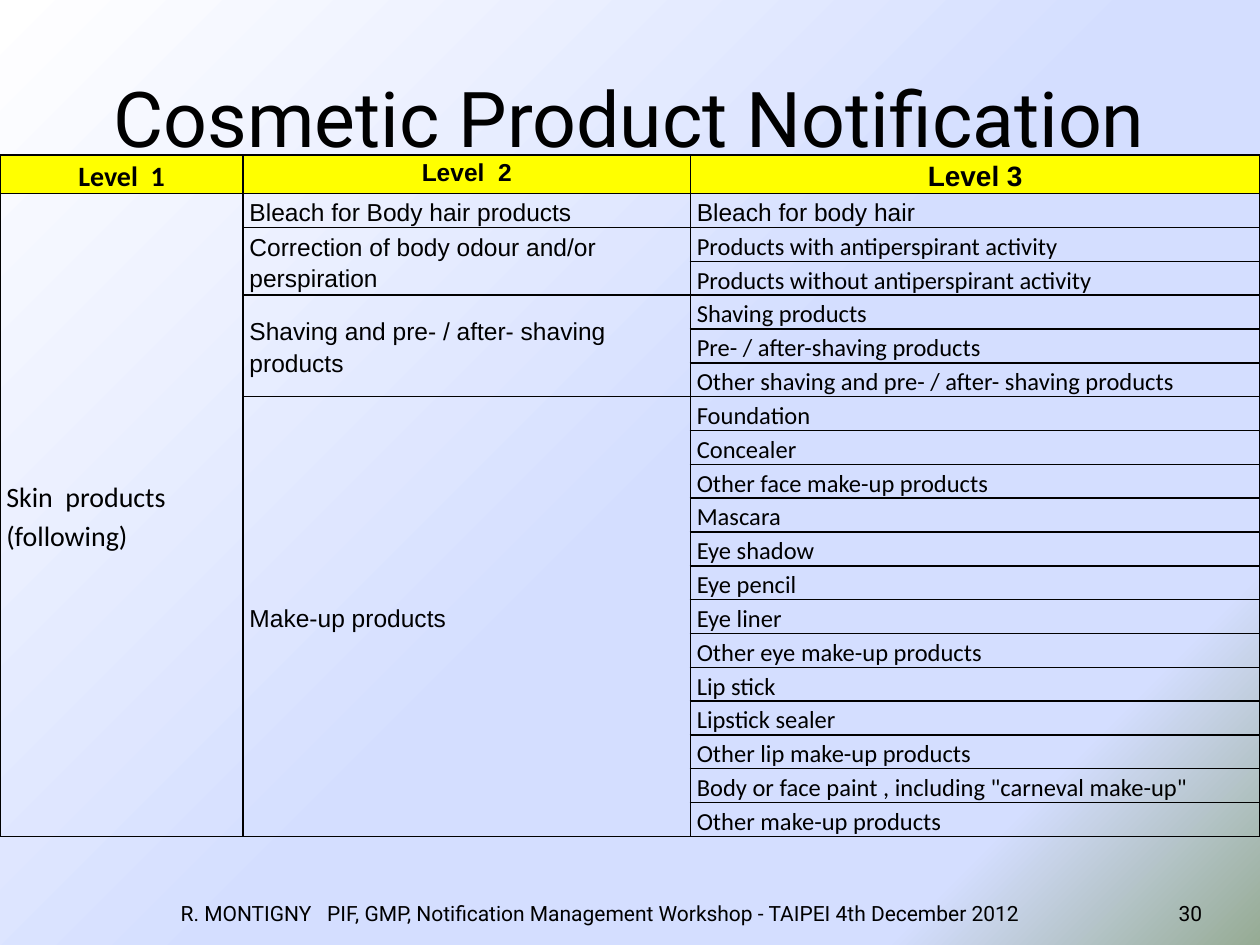
from dataclasses import dataclass

from lxml import etree
from pptx import Presentation
from pptx.dml.color import RGBColor
from pptx.enum import text
from pptx.oxml import ns
from pptx.util import Inches, Pt

COLORS = {"ink": "000000", "header": "FFFF00"}
BACKGROUND_STOPS = [(0, "FFFFFF"), (53, "D4DEFF"), (83, "D4DEFF"), (100, "96AB94")]
COLUMN_WIDTHS = [1.93, 3.55, 4.52]
HEADER_HEIGHT, ROW_HEIGHT = 0.29, 0.26

ALIGN = text.PP_ALIGN
ANCHOR = text.MSO_ANCHOR


@dataclass
class Style:
    size: int
    font: str = "Roboto"
    bold: bool = False
    align: text.PP_ALIGN = ALIGN.LEFT
    anchor: text.MSO_ANCHOR = ANCHOR.MIDDLE
    line_spacing: float = 1.0


@dataclass
class Group:
    name: str
    products: list[str]
    product_style: Style


def body_style(size: int, font: str, anchor=ANCHOR.MIDDLE) -> Style:
    return Style(size, font, anchor=anchor, line_spacing=1.15)


def header_style(size: int, font: str, anchor=ANCHOR.TOP) -> Style:
    return Style(size, font, True, ALIGN.CENTER, anchor, 1.15)


LEVEL_1 = body_style(16, "Calibri")
LEVEL_2 = body_style(14, "Arial")
LEVEL_3 = body_style(14, "Calibri", ANCHOR.TOP)

HEADERS = [
    ("Level  1", header_style(16, "Calibri")),
    ("Level  2", header_style(14, "Arial")),
    ("Level 3", header_style(16, "Arial", ANCHOR.MIDDLE)),
]
GROUPS = [
    Group("Bleach for Body hair products", ["Bleach for body hair"], LEVEL_2),
    Group("Correction of body odour and/or perspiration", [
        "Products with antiperspirant activity",
        "Products without antiperspirant activity",
    ], LEVEL_3),
    Group("Shaving and pre- / after- shaving products", [
        "Shaving products",
        "Pre- / after-shaving products",
        "Other shaving and pre- / after- shaving products",
    ], LEVEL_3),
    Group("Make-up products", [
        "Foundation", "Concealer", "Other face make-up products",
        "Mascara", "Eye shadow", "Eye pencil", "Eye liner",
        "Other eye make-up products",
        "Lip stick", "Lipstick sealer", "Other lip make-up products",
        'Body or face paint , including "carneval make-up"',
        "Other make-up products",
    ], LEVEL_3),
]


def write(frame, words: str, style: Style) -> None:
    frame.text = words
    frame.word_wrap = True
    paragraph = frame.paragraphs[0]
    paragraph.alignment = style.align
    paragraph.line_spacing = style.line_spacing
    paragraph.font.size = Pt(style.size)
    paragraph.font.name = style.font
    paragraph.font.bold = style.bold
    paragraph.font.color.rgb = RGBColor.from_string(COLORS["ink"])


def place(shape, left: float, top: float, width: float, height: float) -> None:
    shape.left, shape.top = Inches(left), Inches(top)
    shape.width, shape.height = Inches(width), Inches(height)


def add_color(parent, color: str) -> None:
    etree.SubElement(parent, ns.qn("a:srgbClr"), val=color)


def paint_background(slide) -> None:
    fill = slide.background.fill
    fill.gradient()
    fill.gradient_angle = 315
    stops = slide.element.find(".//" + ns.qn("a:gsLst"))
    for stop in list(stops):
        stops.remove(stop)
    for percent, color in BACKGROUND_STOPS:
        add_color(etree.SubElement(stops, ns.qn("a:gs"), pos=str(percent * 1000)), color)


def add_footer(slide, box: tuple, words: str, align: text.PP_ALIGN) -> None:
    footer = slide.shapes.add_textbox(*map(Inches, box))
    write(footer.text_frame, words, Style(12, align=align))
    footer.text_frame.vertical_anchor = ANCHOR.MIDDLE


def format_cell(cell) -> None:
    cell.margin_left = cell.margin_right = Inches(0.05)
    cell.margin_top = cell.margin_bottom = 0
    # Small type in every cell keeps merged rows from growing
    cell.text_frame.paragraphs[0].font.size = Pt(14)
    properties = cell._tc.get_or_add_tcPr()
    for side in ("lnL", "lnR", "lnT", "lnB"):
        line = etree.SubElement(properties, ns.qn("a:" + side), w=str(Pt(1)))
        add_color(etree.SubElement(line, ns.qn("a:solidFill")), COLORS["ink"])
    cell.fill.background()


def write_cell(cell, words: str, style: Style) -> None:
    write(cell.text_frame, words, style)
    cell.vertical_anchor = style.anchor


def add_levels_table(slide) -> None:
    product_count = sum(len(group.products) for group in GROUPS)
    height = HEADER_HEIGHT + product_count * ROW_HEIGHT
    table = slide.shapes.add_table(
        product_count + 1, len(HEADERS), 0, Inches(1.23), Inches(10), Inches(height)
    ).table
    table.first_row = table.horz_banding = False
    for column, width in zip(table.columns, COLUMN_WIDTHS):
        column.width = Inches(width)
    for index, row in enumerate(table.rows):
        row.height = Inches(ROW_HEIGHT if index else HEADER_HEIGHT)
    for cell in table.iter_cells():
        format_cell(cell)

    # Header row
    for column, (words, style) in enumerate(HEADERS):
        cell = table.cell(0, column)
        write_cell(cell, words, style)
        cell.fill.solid()
        cell.fill.fore_color.rgb = RGBColor.from_string(COLORS["header"])

    # Level 1 spans every product, level 2 spans its own products
    table.cell(1, 0).merge(table.cell(product_count, 0))
    write_cell(table.cell(1, 0), "Skin  products (following)", LEVEL_1)
    first = 1
    for group in GROUPS:
        last = first + len(group.products) - 1
        if last > first:
            table.cell(first, 1).merge(table.cell(last, 1))
        write_cell(table.cell(first, 1), group.name, LEVEL_2)
        for row, product in enumerate(group.products, first):
            write_cell(table.cell(row, 2), product, group.product_style)
        first = last + 1


def main() -> None:
    deck = Presentation()
    deck.slide_width, deck.slide_height = Inches(10), Inches(7.5)
    slide = deck.slides.add_slide(deck.slide_layouts[5])
    paint_background(slide)

    # Title
    title = slide.shapes.title
    place(title, 0.5, 0.3, 9, 1.25)
    write(title.text_frame, "Cosmetic Product Notification", Style(44, align=ALIGN.CENTER))
    title.text_frame.vertical_anchor = ANCHOR.MIDDLE

    # Footer and page number
    add_footer(
        slide, (0.59, 7.05, 8.35, 0.4),
        "R. MONTIGNY   PIF, GMP, Notification Management Workshop - TAIPEI 4th December 2012",
        ALIGN.CENTER,
    )
    add_footer(slide, (9.09, 7.05, 0.55, 0.4), "30", ALIGN.RIGHT)

    add_levels_table(slide)
    deck.save("out.pptx")


if __name__ == "__main__":
    main()
